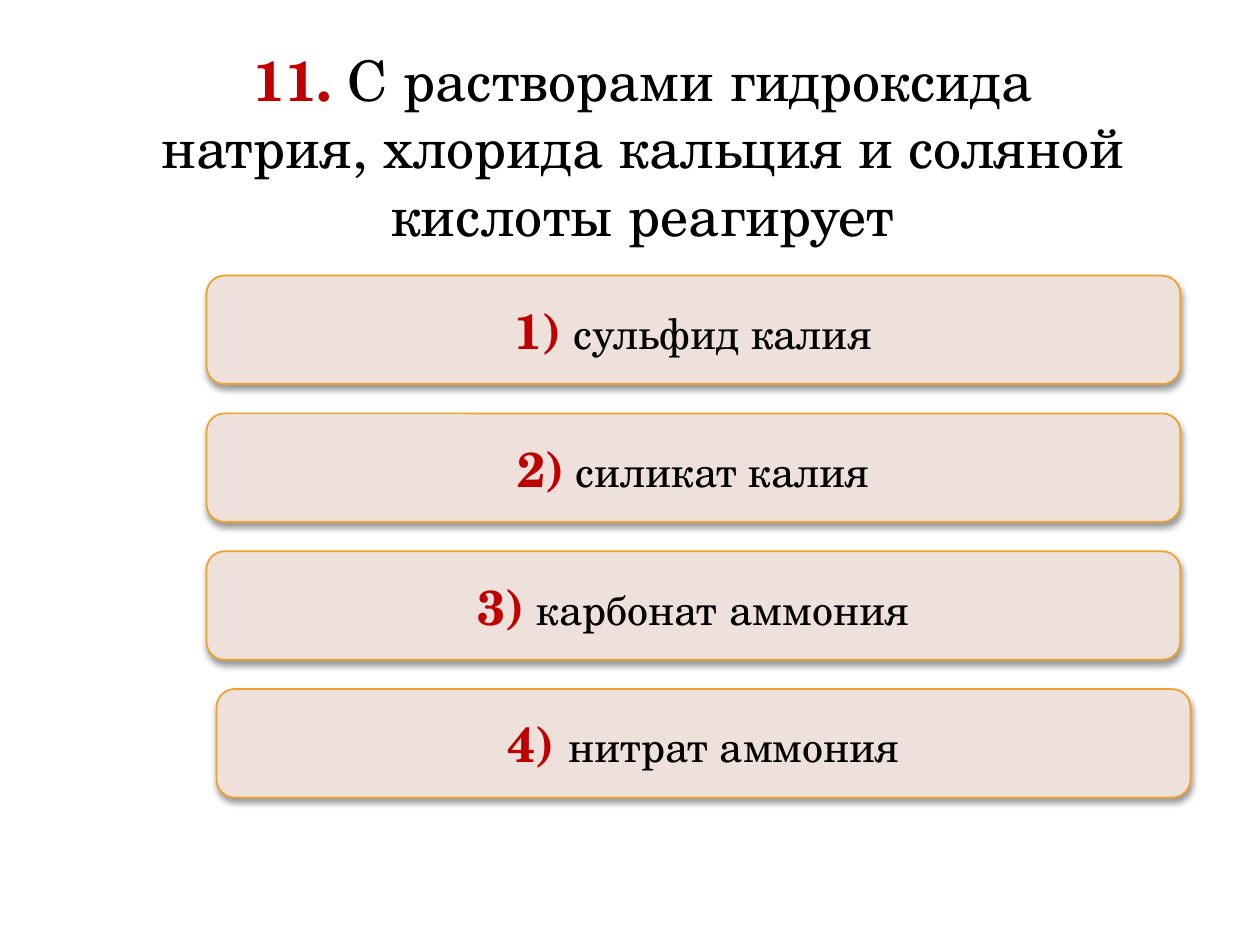
from dataclasses import dataclass

from lxml import etree
from pptx import Presentation
from pptx.dml.color import RGBColor
from pptx.enum.shapes import MSO_SHAPE
from pptx.enum.text import MSO_ANCHOR, PP_ALIGN
from pptx.oxml.ns import qn
from pptx.util import Pt

ROUNDED = MSO_SHAPE.ROUNDED_RECTANGLE
CENTER = PP_ALIGN.CENTER
MIDDLE = MSO_ANCHOR.MIDDLE

FONT = "TeX Gyre Schola"
RED, BLACK = "C00000", "000000"
BOX_FILL, BOX_LINE = "EEE0DB", "F0A22E"
FIRST_TOP, STEP = 157.5, 78.75
BOX_W, BOX_H = 556.5, 62


@dataclass
class Answer:
    number: str
    text: str
    left: float = 118


ANSWERS = [
    Answer("1)", " сульфид калия"),
    Answer("2)", " силикат калия"),
    Answer("3)", " карбонат аммония"),
    Answer("4) ", "нитрат аммония", 123.75),
]


def rgb(color: str) -> RGBColor:
    return RGBColor.from_string(color)


def write(tf, number: str, number_size: float, text: str, text_size: float) -> None:
    tf.word_wrap = True
    p = tf.paragraphs[0]
    p.alignment = CENTER
    p.font.name = FONT
    parts = [(number, number_size, RED, True), (text, text_size, BLACK, False)]
    for content, size, color, bold in parts:
        r = p.add_run()
        r.text = content
        r.font.name = FONT
        r.font.size = Pt(size)
        r.font.bold = bold
        r.font.color.rgb = rgb(color)


def add_shadow(sp) -> None:
    sp.shadow.inherit = False
    effects = sp._element.spPr.find(qn("a:effectLst"))
    outer = etree.SubElement(
        effects, qn("a:outerShdw"), blurRad=str(Pt(4)), dist=str(Pt(2)),
        dir="5400000", rotWithShape="0")
    color = etree.SubElement(outer, qn("a:srgbClr"), val=BLACK)
    etree.SubElement(color, qn("a:alpha"), val="40000")


def add_answer(s, answer: Answer, top: float) -> None:
    sp = s.shapes.add_shape(ROUNDED, Pt(answer.left), Pt(top), Pt(BOX_W), Pt(BOX_H))
    sp.fill.solid()
    sp.fill.fore_color.rgb = rgb(BOX_FILL)
    sp.line.color.rgb = rgb(BOX_LINE)
    sp.line.width = Pt(1)
    add_shadow(sp)
    sp.text_frame.vertical_anchor = MIDDLE
    write(sp.text_frame, answer.number, 28, answer.text, 24)


def main() -> None:
    prs = Presentation()
    prs.slide_width, prs.slide_height = Pt(720), Pt(540)
    s = prs.slides.add_slide(prs.slide_layouts[6])
    question = s.shapes.add_textbox(Pt(78.5), Pt(22.5), Pt(578), Pt(162.5))
    write(question.text_frame, "11.", 32,
          " С растворами гидроксида натрия, хлорида кальция и соляной кислоты реагирует", 32)
    for i, answer in enumerate(ANSWERS):
        add_answer(s, answer, FIRST_TOP + i * STEP)
    prs.save("out.pptx")


if __name__ == "__main__":
    main()
